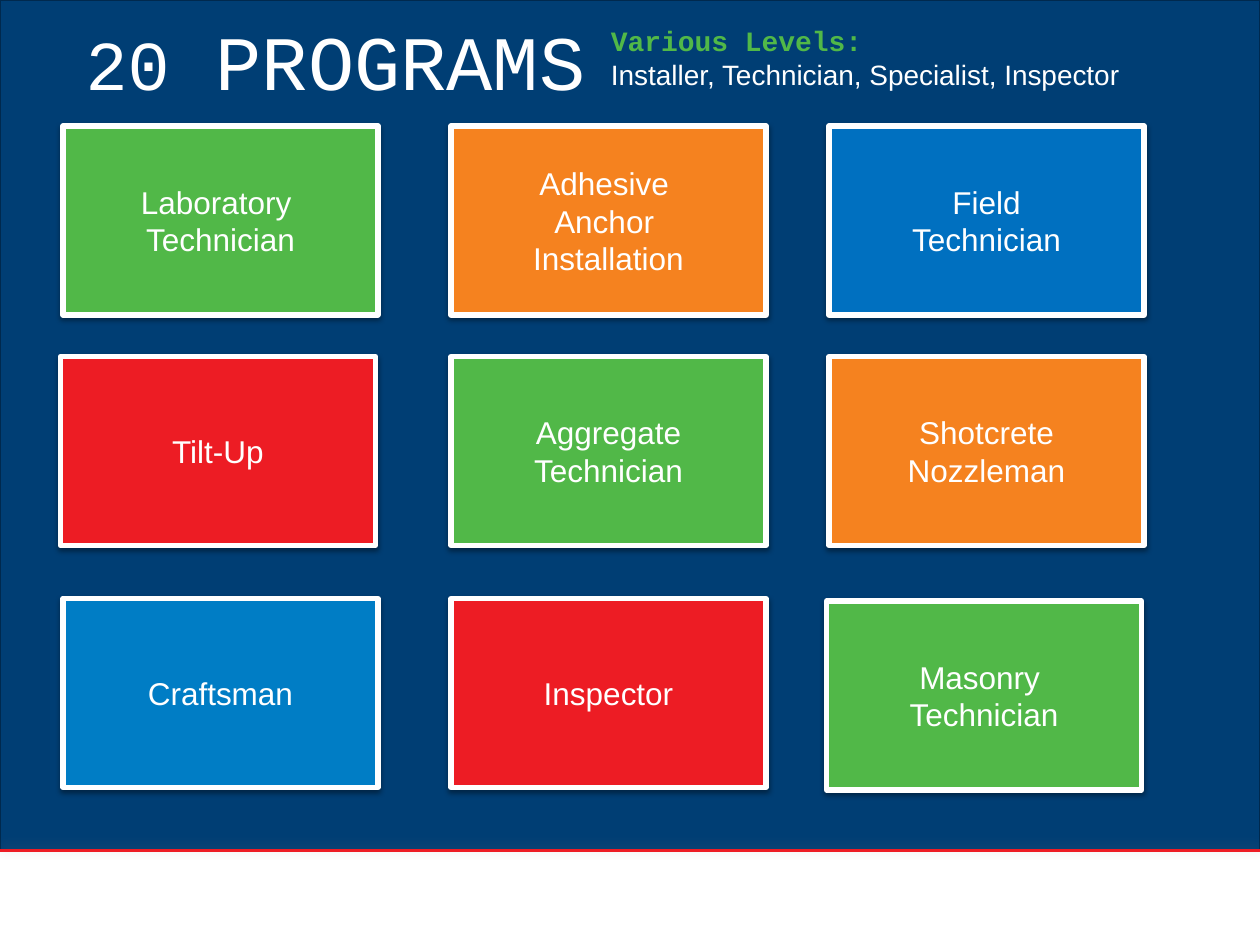
from lxml import etree
from pptx import Presentation
from pptx.dml.color import RGBColor
from pptx.enum.shapes import MSO_CONNECTOR, MSO_SHAPE
from pptx.enum.text import MSO_ANCHOR, MSO_AUTO_SIZE, PP_ALIGN
from pptx.oxml.ns import qn
from pptx.util import Inches, Pt

RECT = MSO_SHAPE.RECTANGLE
STRAIGHT = MSO_CONNECTOR.STRAIGHT
TOP, MIDDLE = MSO_ANCHOR.TOP, MSO_ANCHOR.MIDDLE
LEFT, CENTER = PP_ALIGN.LEFT, PP_ALIGN.CENTER
GROW = MSO_AUTO_SIZE.SHAPE_TO_FIT_TEXT

NAVY, DARK_NAVY, WHITE = "003E74", "00294E", "FFFFFF"
GREEN, ORANGE, RED = "51B848", "F5821F", "ED1C24"
BLUE, BRIGHT_BLUE = "0070C0", "007DC5"
SANS, MONO = "Arial", "Courier New"

TILE_W, TILE_H = 2.5, 1.5
COLUMNS = [0.5, 3.58, 6.58]
ROWS = [1, 2.83, 4.75]
PROGRAMS = [
    [(GREEN, ["Laboratory ", "Technician"]), (RED, ["Tilt-Up"]), (BRIGHT_BLUE, ["Craftsman"])],
    [(ORANGE, ["Adhesive ", "Anchor ", "Installation"]), (GREEN, ["Aggregate", "Technician"]),
     (RED, ["Inspector"])],
    [(BLUE, ["Field", "Technician"]), (ORANGE, ["Shotcrete", "Nozzleman"]),
     (GREEN, ["Masonry ", "Technician"])],
]
NUDGES = {(0, 1): (-0.02, 0), (2, 2): (-0.02, 0.02)}


def rgb(value):
    return RGBColor.from_string(value)


class SlideBuilder:
    def __init__(self, slide):
        self.s = slide

    def fill_text(self, tf, paragraphs, align=LEFT, anchor=TOP):
        tf.word_wrap = True
        tf.vertical_anchor = anchor
        for i, runs in enumerate(paragraphs):
            p = tf.paragraphs[0] if i == 0 else tf.add_paragraph()
            p.alignment = align
            for text, size, font, color, bold in runs:
                r = p.add_run()
                r.text = text
                r.font.size = Pt(size)
                r.font.name = font
                r.font.bold = bold
                r.font.color.rgb = rgb(color)

    def shadow(self, sp, color, alpha, blur, dist, angle):
        effects = sp._element.spPr.find(qn("a:effectLst"))
        if effects is None:
            effects = etree.SubElement(sp._element.spPr, qn("a:effectLst"))
        outer = etree.SubElement(effects, qn("a:outerShdw"), blurRad=str(Pt(blur)),
                                 dist=str(Pt(dist)), dir=str(angle * 60000), rotWithShape="0")
        clr = etree.SubElement(outer, qn("a:srgbClr"), val=color)
        etree.SubElement(clr, qn("a:alpha"), val=str(alpha * 1000))

    def rect(self, x, y, w, h, fill, line, width):
        sp = self.s.shapes.add_shape(RECT, Inches(x), Inches(y), Inches(w), Inches(h))
        sp.fill.solid()
        sp.fill.fore_color.rgb = rgb(fill)
        sp.line.color.rgb = rgb(line)
        sp.line.width = Pt(width)
        sp.shadow.inherit = False
        return sp

    def rule(self, y, color, width):
        line = self.s.shapes.add_connector(STRAIGHT, 0, Inches(y), Inches(10), Inches(y))
        line.line.color.rgb = rgb(color)
        line.line.width = Pt(width)
        self.shadow(line, "808080", 28, 6, 2, 270)

    def title(self, x, y, w, h, runs):
        sp = self.s.shapes.title
        sp.left, sp.top, sp.width, sp.height = Inches(x), Inches(y), Inches(w), Inches(h)
        self.fill_text(sp.text_frame, [runs])
        sp.text_frame.auto_size = GROW
        self.s.shapes._spTree.append(sp._element)

    def tile(self, x, y, fill, lines):
        sp = self.rect(x, y, TILE_W, TILE_H, fill, WHITE, 3)
        self.shadow(sp, "000000", 38, 3.1, 1.6, 90)
        self.fill_text(sp.text_frame, [[(text, 18, SANS, WHITE, False)] for text in lines],
                       CENTER, MIDDLE)

    def text(self, x, y, w, h, paragraphs):
        sp = self.s.shapes.add_textbox(Inches(x), Inches(y), Inches(w), Inches(h))
        self.fill_text(sp.text_frame, paragraphs)
        sp.text_frame.auto_size = GROW


def main():
    prs = Presentation()
    prs.slide_width, prs.slide_height = Inches(10), Inches(7.5)
    b = SlideBuilder(prs.slides.add_slide(prs.slide_layouts[5]))
    b.rect(0, 0, 10, 6.75, NAVY, DARK_NAVY, 0.75)
    b.rule(6.75, RED, 2)
    b.title(0.58, 0.06, 4.25, 0.84, [("20", 40, MONO, WHITE, False),
                                     (" PROGRAMS", 44, MONO, WHITE, False)])
    for col, (x, programs) in enumerate(zip(COLUMNS, PROGRAMS)):
        for row, (y, (fill, lines)) in enumerate(zip(ROWS, programs)):
            dx, dy = NUDGES.get((col, row), (0, 0))
            b.tile(x + dx, y + dy, fill, lines)
    b.text(4.75, 0.14, 4.75, 0.64, [
        [("Various Levels:", 16, MONO, GREEN, True)],
        [("Installer, Technician, Specialist, Inspector", 16, SANS, WHITE, False)],
    ])
    prs.save("out.pptx")


if __name__ == "__main__":
    main()
